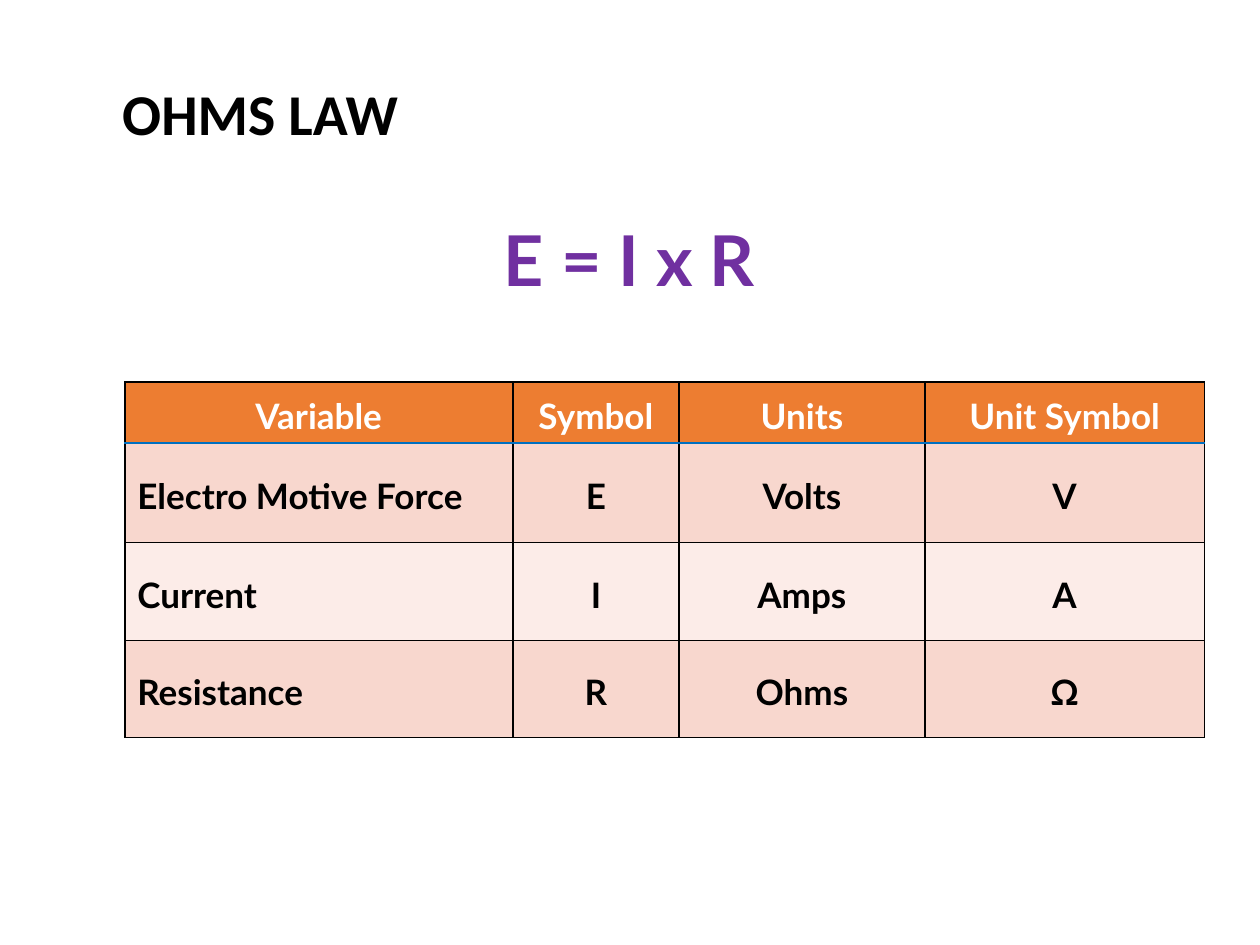
from lxml.etree import SubElement
from pptx import Presentation
from pptx.dml.color import RGBColor
from pptx.enum.text import MSO_ANCHOR, MSO_AUTO_SIZE, PP_ALIGN
from pptx.oxml.ns import qn
from pptx.util import Inches, Pt

COLORS = {
    "black": "000000",
    "white": "FFFFFF",
    "purple": "7030A0",
    "orange": "ED7D31",
    "blue": "0070C0",
    "band_dark": "F8D7CE",
    "band_light": "FCECE8",
}
COLUMN_WIDTHS = [3.08, 1.32, 1.95, 2.22]
ROW_HEIGHTS = [0.48, 0.79, 0.78, 0.77]
ROWS = [
    ["Variable", "Symbol", "Units", "Unit Symbol"],
    ["Electro Motive Force", "E", "Volts", "V"],
    ["Current", "I", "Amps", "A"],
    ["Resistance", "R", "Ohms", "Ω"],
]


class SlideBuilder:
    def __init__(self, slide, font="Lato"):
        self.slide = slide
        self.font = font

    def set_text(self, frame, text, size, color, align, spacing=1.0, font=None):
        paragraph = frame.paragraphs[0]
        paragraph.text = text
        paragraph.alignment = align
        paragraph.line_spacing = spacing
        paragraph.font.name = font or self.font
        paragraph.font.size = Pt(size)
        paragraph.font.bold = True
        paragraph.font.color.rgb = RGBColor.from_string(COLORS[color])

    def title(self, text, left, top, width, height):
        shape = self.slide.shapes.title
        shape.left, shape.top = Inches(left), Inches(top)
        shape.width, shape.height = Inches(width), Inches(height)
        shape.text_frame.vertical_anchor = MSO_ANCHOR.MIDDLE
        self.set_text(shape.text_frame, text, 33, "black", PP_ALIGN.LEFT, 0.9, "Calibri")

    def formula(self, text, left, top, width, height):
        shape = self.slide.shapes.add_textbox(
            Inches(left), Inches(top), Inches(width), Inches(height))
        shape.text_frame.word_wrap = True
        shape.text_frame.auto_size = MSO_AUTO_SIZE.SHAPE_TO_FIT_TEXT
        self.set_text(shape.text_frame, text, 40, "purple", PP_ALIGN.CENTER)

    def borders(self, cell, **special):
        properties = cell._tc.get_or_add_tcPr()
        for side in ("L", "R", "T", "B"):
            color, width = special.get(side, ("black", 1))
            line = SubElement(properties, qn(f"a:ln{side}"), w=str(Pt(width)))
            fill = SubElement(line, qn("a:solidFill"))
            SubElement(fill, qn("a:srgbClr"), val=COLORS[color])

    def table(self, rows, left, top, widths, heights):
        table = self.slide.shapes.add_table(
            len(rows), len(widths), Inches(left), Inches(top),
            Inches(sum(widths)), Inches(sum(heights))).table
        for column, width in zip(table.columns, widths):
            column.width = Inches(width)
        for row, height in zip(table.rows, heights):
            row.height = Inches(height)
        rule = ("blue", 1.5)
        for i, values in enumerate(rows):
            band = "band_dark" if i % 2 else "band_light"
            special = {0: {"B": rule}, 1: {"T": rule}}.get(i, {})
            for j, value in enumerate(values):
                cell = table.cell(i, j)
                cell.vertical_anchor = MSO_ANCHOR.MIDDLE
                self.borders(cell, **special)
                cell.fill.solid()
                cell.fill.fore_color.rgb = RGBColor.from_string(
                    COLORS[band if i else "orange"])
                align = PP_ALIGN.LEFT if i and j == 0 else PP_ALIGN.CENTER
                self.set_text(cell.text_frame, value, 20,
                              "black" if i else "white", align, 1.15)


def main():
    presentation = Presentation()
    presentation.slide_width = Inches(10)
    presentation.slide_height = Inches(7.5)
    slide = presentation.slides.add_slide(presentation.slide_layouts[5])
    builder = SlideBuilder(slide)
    builder.title("OHMS LAW", 0.87, 0.3, 8.83, 1.25)
    builder.formula("E = I x R", 3.45, 1.67, 3.09, 0.77)
    builder.table(ROWS, 0.99, 3.03, COLUMN_WIDTHS, ROW_HEIGHTS)
    presentation.save("out.pptx")


if __name__ == "__main__":
    main()
